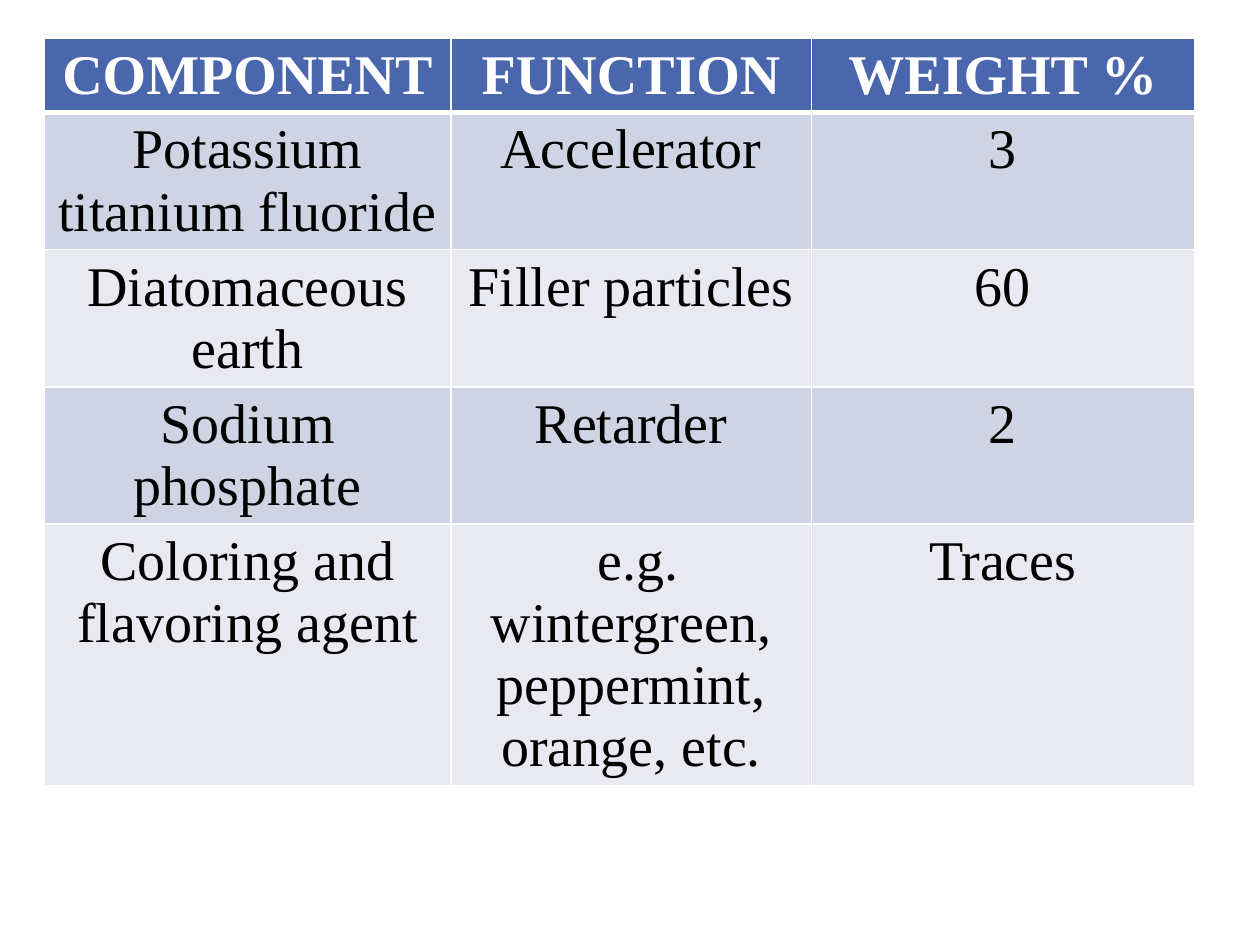
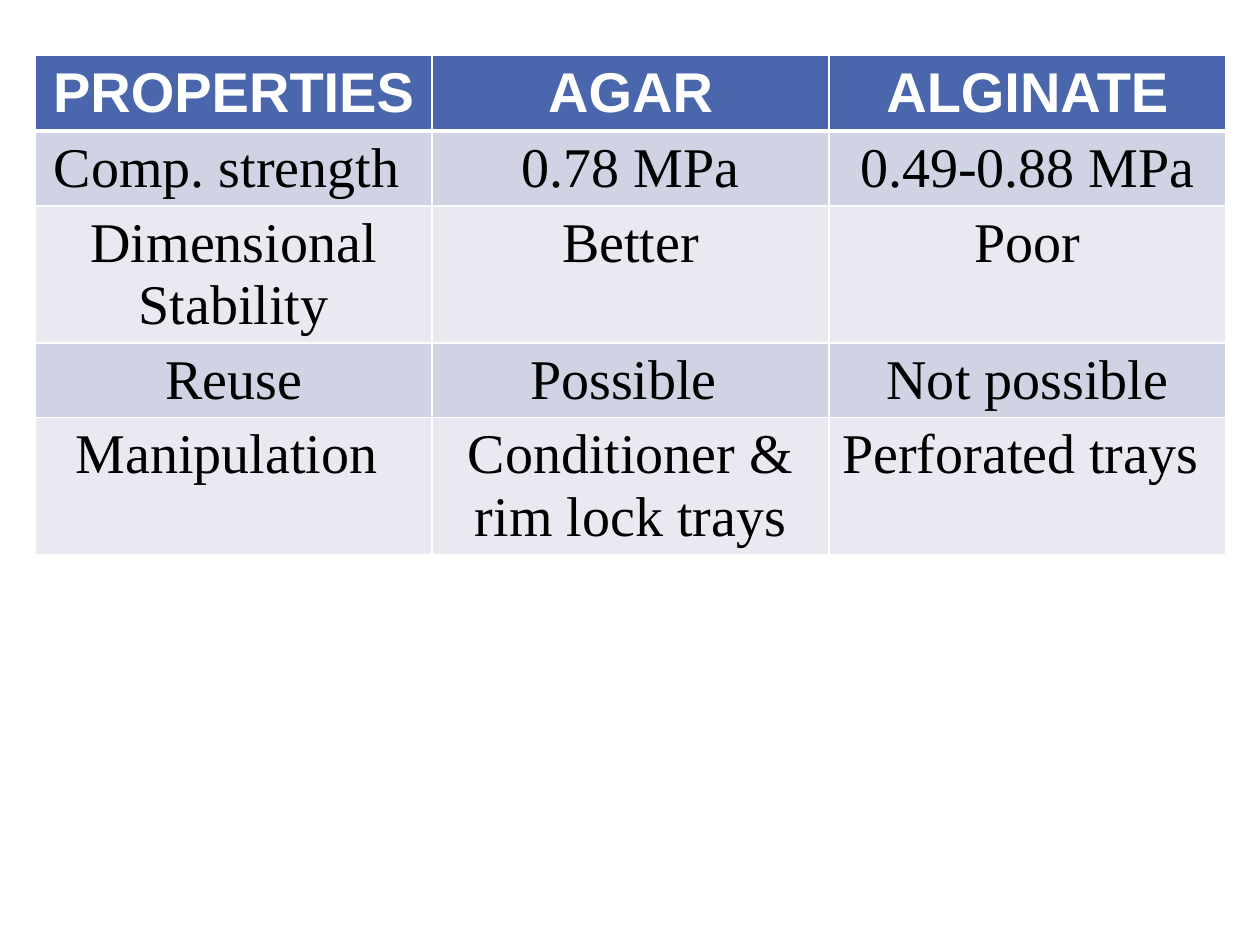
from lxml import etree
from pptx import Presentation
from pptx.dml.color import RGBColor
from pptx.enum.text import PP_ALIGN
from pptx.oxml.ns import qn
from pptx.util import Inches, Pt

CENTER = PP_ALIGN.CENTER
BLANK_LAYOUT = 6

WHITE = RGBColor(0xFF, 0xFF, 0xFF)
BLACK = RGBColor(0x00, 0x00, 0x00)
HEADER_BLUE = RGBColor(0x4A, 0x66, 0xAC)
BAND_DARK = RGBColor(0xD0, 0xD3, 0xE3)
BAND_LIGHT = RGBColor(0xE9, 0xEA, 0xF1)

SERIF = "Times New Roman"
SANS = "Arial"

ALGINATE_COMPOSITION = [
    ("COMPONENT", "FUNCTION", "WEIGHT %"),
    ("Potassium titanium fluoride", "Accelerator", "3"),
    ("Diatomaceous earth", "Filler particles", "60"),
    ("Sodium phosphate", "Retarder", "2"),
    ("Coloring and flavoring agent",
     " e.g. wintergreen, peppermint, orange, etc.", "Traces"),
]

AGAR_VERSUS_ALGINATE = [
    ("PROPERTIES", "AGAR", "ALGINATE"),
    ("Comp. strength ", "0.78 MPa", "0.49-0.88 MPa"),
    ("Dimensional Stability", "Better", "Poor"),
    ("Reuse", "Possible ", "Not possible"),
    ("Manipulation ", "Conditioner & rim lock trays", "Perforated trays "),
]


class Deck:
    text_size = Pt(32)
    row_height = Inches(0.41)
    thin_rule = Pt(1)
    header_rule = Pt(3)

    def __init__(self):
        self.presentation = Presentation()
        self.presentation.slide_width = Inches(10)
        self.presentation.slide_height = Inches(7.5)
        self.slide = None

    def new_slide(self):
        layout = self.presentation.slide_layouts[BLANK_LAYOUT]
        self.slide = self.presentation.slides.add_slide(layout)

    def border(self, cell, side, width):
        properties = cell._tc.get_or_add_tcPr()
        line = etree.SubElement(properties, qn(f"a:{side}"), w=str(width))
        fill = etree.SubElement(line, qn("a:solidFill"))
        etree.SubElement(fill, qn("a:srgbClr"), val=str(WHITE))

    def cell(self, cell, text, row, header_font):
        is_header = row == 0
        top = self.header_rule if row == 1 else self.thin_rule
        bottom = self.header_rule if is_header else self.thin_rule
        for side, width in (("lnL", self.thin_rule), ("lnR", self.thin_rule),
                            ("lnT", top), ("lnB", bottom)):
            self.border(cell, side, width)

        band = BAND_DARK if row % 2 else BAND_LIGHT
        cell.fill.solid()
        cell.fill.fore_color.rgb = HEADER_BLUE if is_header else band

        cell.text = text
        paragraph = cell.text_frame.paragraphs[0]
        paragraph.alignment = CENTER
        font = paragraph.font
        font.name = header_font if is_header else SERIF
        font.size = self.text_size
        font.bold = is_header
        font.color.rgb = WHITE if is_header else BLACK

    def table(self, left, top, column_widths, rows, header_font):
        table = self.slide.shapes.add_table(
            len(rows), len(column_widths), Inches(left), Inches(top),
            Inches(sum(column_widths)), self.row_height * len(rows)).table
        for column, width in zip(table.columns, column_widths):
            column.width = Inches(width)
        for r, texts in enumerate(rows):
            for c, text in enumerate(texts):
                self.cell(table.cell(r, c), text, r, header_font)


def main():
    deck = Deck()
    deck.new_slide()
    deck.table(0.35, 0.3, [3.23, 2.86, 3.04], ALGINATE_COMPOSITION, SERIF)
    deck.new_slide()
    deck.table(0.28, 0.44, [3.15] * 3, AGAR_VERSUS_ALGINATE, SANS)
    deck.presentation.save("out.pptx")


if __name__ == "__main__":
    main()
